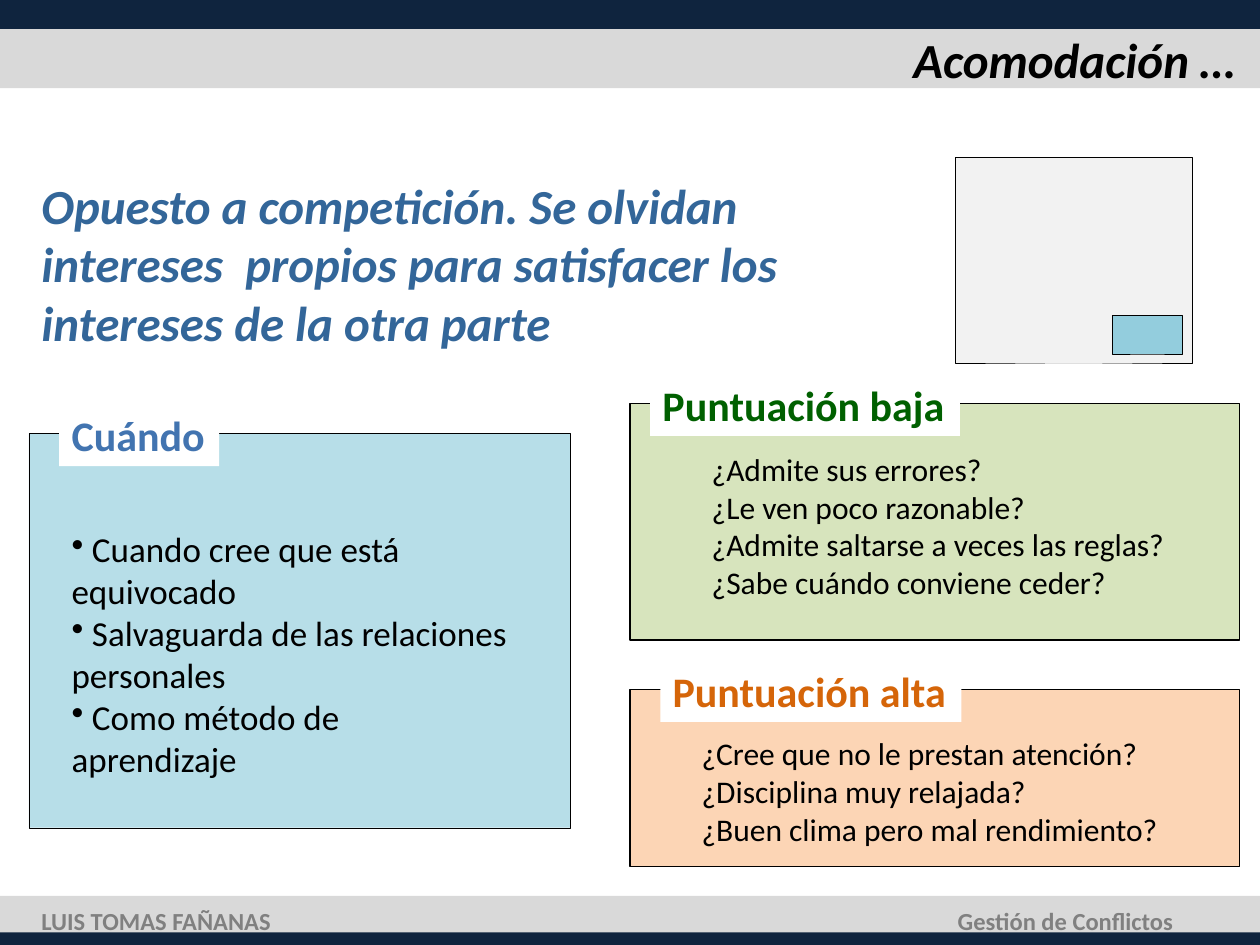
from typing import NamedTuple, Optional

from lxml import etree
from pptx import Presentation
from pptx.dml.color import RGBColor
from pptx.enum import shapes, text
from pptx.oxml.ns import qn
from pptx.util import Emu, Pt

PX = 9144  # EMU in one px, 100 px to the inch
FONT = "Calibri"
NAVY, GREY, BLACK, WHITE = "0F243E", "D9D9D9", "000000", "FFFFFF"
LEFT, RIGHT = text.PP_ALIGN.LEFT, text.PP_ALIGN.RIGHT
TOP, MIDDLE = text.MSO_ANCHOR.TOP, text.MSO_ANCHOR.MIDDLE


class Area(NamedTuple):
    left: int
    top: int
    width: int
    height: int


class Block(NamedTuple):
    area: Area
    fill: str
    line_width: Optional[float] = None


class Style(NamedTuple):
    size: int
    color: str = BLACK
    bold: bool = False
    italic: bool = False
    align: int = LEFT
    anchor: int = TOP
    wrap: bool = True
    bullet: str = ""


class Panel(NamedTuple):
    block: Block
    label_area: Area
    label: str
    label_color: str
    body_area: Area
    lines: list[str]
    body_style: Style


def rgb(color: str) -> RGBColor:
    return RGBColor.from_string(color)


def emu(area: Area) -> list[Emu]:
    return [Emu(length * PX) for length in area]


def draw_block(page, block: Block):
    shape = page.shapes.add_shape(shapes.MSO_SHAPE.RECTANGLE, *emu(block.area))
    shape.shadow.inherit = False
    shape.fill.solid()
    shape.fill.fore_color.rgb = rgb(block.fill)
    if block.line_width is None:
        shape.line.fill.background()
    else:
        shape.line.color.rgb = rgb(BLACK)
        shape.line.width = Pt(block.line_width)
    return shape


def write(box, lines: list[str], style: Style) -> None:
    frame = box.text_frame
    frame.word_wrap = style.wrap
    frame.vertical_anchor = style.anchor
    font_values = {"name": FONT, "size": Pt(style.size),
                   "bold": style.bold, "italic": style.italic}
    for index, line in enumerate(lines):
        para = frame.paragraphs[0] if index == 0 else frame.add_paragraph()
        para.alignment = style.align
        if style.bullet:
            bullet = etree.SubElement(para._p.get_or_add_pPr(), qn("a:buChar"))
            bullet.set("char", style.bullet)
        span = para.add_run()
        span.text = line
        for name, value in font_values.items():
            setattr(span.font, name, value)
        span.font.color.rgb = rgb(style.color)


def draw_text(page, area: Area, lines: list[str], style: Style) -> None:
    write(page.shapes.add_textbox(*emu(area)), lines, style)


def draw_panel(page, panel: Panel) -> None:
    draw_block(page, panel.block)
    label = draw_block(page, Block(panel.label_area, WHITE))
    write(label, [panel.label],
          Style(24, panel.label_color, bold=True, wrap=False))
    draw_text(page, panel.body_area, panel.lines, panel.body_style)


BLOCKS = [
    Block(Area(0, 711, 1000, 34), GREY),
    Block(Area(0, 740, 1000, 10), NAVY),
    Block(Area(0, 0, 1000, 70), GREY),
    Block(Area(0, 0, 1000, 23), NAVY),
    Block(Area(758, 125, 188, 163), "F2F2F2", 0.25),
    Block(Area(883, 250, 55, 31), "93CDDD", 0.25),
]

FOOTER = Style(14, "808080", bold=True, anchor=MIDDLE, wrap=False)
TEXTS = [
    (Area(187, 23, 803, 48), "Acomodación …",
     Style(28, bold=True, italic=True, align=RIGHT, anchor=MIDDLE)),
    (Area(23, 134, 711, 151),
     "Opuesto a competición. Se olvidan intereses  propios para satisfacer "
     "los intereses de la otra parte",
     Style(28, "336699", bold=True, italic=True)),
    (Area(23, 714, 204, 34), "LUIS TOMAS FAÑANAS", FOOTER),
    (Area(748, 714, 193, 34), "Gestión de Conflictos",
     FOOTER._replace(align=RIGHT)),
]

PANELS = [
    Panel(Block(Area(23, 344, 430, 313), "B7DEE8", 0.25),
          Area(47, 320, 127, 50), "Cuándo", "4274B0",
          Area(47, 414, 367, 212),
          [" Cuando cree que está equivocado",
           " Salvaguarda de las relaciones personales",
           " Como método de aprendizaje"],
          Style(20, bullet="•")),
    Panel(Block(Area(500, 320, 484, 188), "D7E4BD", 0.75),
          Area(516, 296, 246, 50), "Puntuación baja", "006000",
          Area(555, 352, 398, 131),
          ["¿Admite sus errores?",
           "¿Le ven poco razonable?",
           "¿Admite saltarse a veces las reglas?",
           "¿Sabe cuándo conviene ceder?"],
          Style(18)),
    Panel(Block(Area(500, 547, 484, 141), "FCD5B5", 0.75),
          Area(524, 523, 239, 50), "Puntuación alta", "D56509",
          Area(547, 578, 422, 101),
          ["¿Cree que no le prestan atención?",
           "¿Disciplina muy relajada?",
           "¿Buen clima pero mal rendimiento?"],
          Style(18)),
]


def main() -> None:
    deck = Presentation()
    deck.slide_width, deck.slide_height = Emu(1000 * PX), Emu(750 * PX)
    page = deck.slides.add_slide(deck.slide_layouts[6])
    for block in BLOCKS:
        draw_block(page, block)
    for area, line, style in TEXTS:
        draw_text(page, area, [line], style)
    for panel in PANELS:
        draw_panel(page, panel)
    deck.save("out.pptx")


if __name__ == "__main__":
    main()
